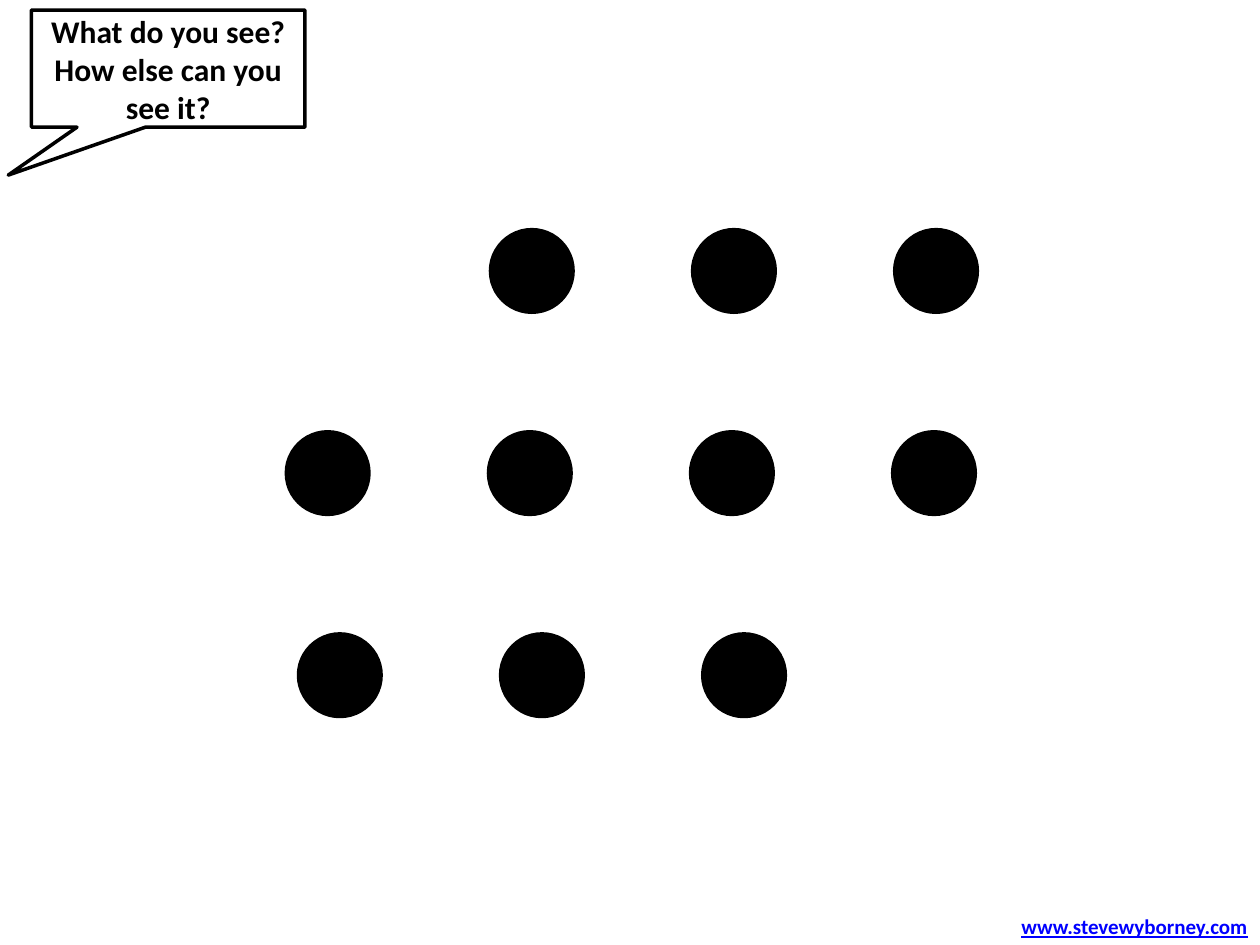
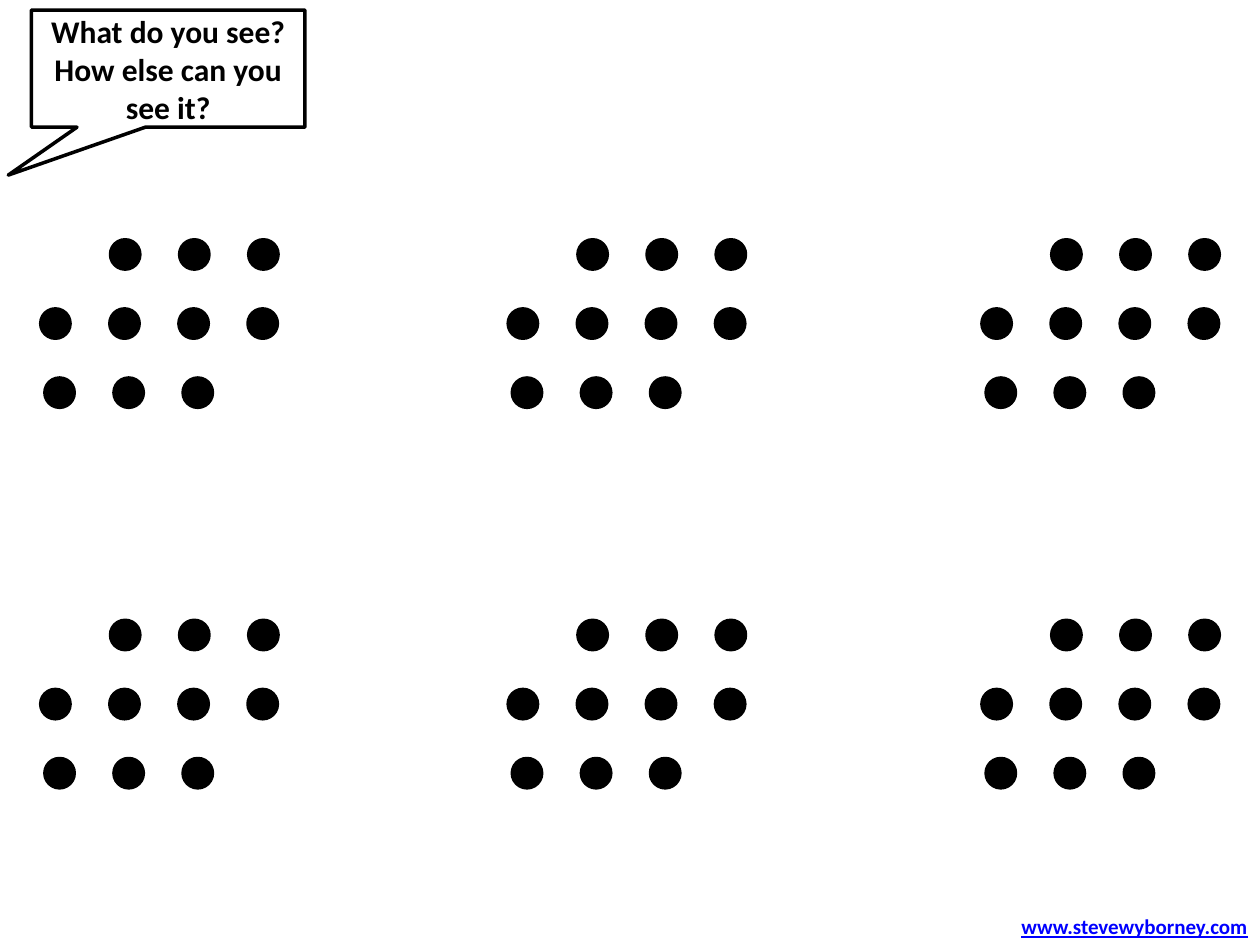
from pptx import Presentation
from pptx.dml.color import RGBColor
from pptx.enum.shapes import MSO_SHAPE
from pptx.enum.text import MSO_ANCHOR, MSO_AUTO_SIZE, PP_ALIGN
from pptx.util import Inches, Pt

ELLIPSE = MSO_SHAPE.OVAL
CALLOUT = MSO_SHAPE.RECTANGULAR_CALLOUT
MIDDLE = MSO_ANCHOR.MIDDLE
FIT_SHAPE = MSO_AUTO_SIZE.SHAPE_TO_FIT_TEXT
CENTER, RIGHT = PP_ALIGN.CENTER, PP_ALIGN.RIGHT

BLACK, WHITE, LINK_BLUE = "000000", "FFFFFF", "0000FF"
QUESTION_FONT = {"name": "Calibri", "size": Pt(18), "bold": True}
FOOTER_FONT = {"name": "Calibri", "size": Pt(12), "bold": True, "underline": True}

CALLOUT_BOX = (0.25, 0.08, 2.17, 0.93)
CALLOUT_TIP = (-0.585, 0.909)
FOOTER_BOX = (7.98, 7.2, 2.02, 0.3)
QUESTIONS = ["What do you see?", "How else can you see it?"]

# Dot rows: indent in pitches and number of dots
DOT_ROWS = [(1.01, 3), (0, 4), (0.06, 3)]
DOT_DIAMETER = 0.4  # in pitches
PATTERN_PITCHES = 1.01 + 2 + DOT_DIAMETER  # width of the whole pattern

# Dot patterns as left, top, width
LARGE_PATTERNS = [(2.28, 1.83, 5.47)]
SMALL_PATTERNS = [(left, top, 1.87)
                  for top in (1.91, 4.93) for left in (0.33, 4.04, 7.8)]


def color(hex_string):
    return RGBColor.from_string(hex_string)


def write_paragraphs(text_frame, lines, font_format, font_color, alignment):
    for index, line in enumerate(lines):
        paragraph = text_frame.paragraphs[0] if index == 0 else text_frame.add_paragraph()
        paragraph.alignment = alignment
        run = paragraph.add_run()
        run.text = line
        for name, value in font_format.items():
            setattr(run.font, name, value)
        run.font.color.rgb = color(font_color)


def add_outlined_shape(shapes, kind, box, fill, line_width):
    shape = shapes.add_shape(kind, *map(Inches, box))
    shape.shadow.inherit = False
    shape.fill.solid()
    shape.fill.fore_color.rgb = color(fill)
    shape.line.color.rgb = color(BLACK)
    shape.line.width = Pt(line_width)
    return shape


def add_dot_pattern(slide, left, top, width):
    pitch = width / PATTERN_PITCHES
    diameter = DOT_DIAMETER * pitch
    group = slide.shapes.add_group_shape()
    for row, (indent, count) in enumerate(DOT_ROWS):
        for column in range(count):
            box = (left + (indent + column) * pitch, top + row * pitch, diameter, diameter)
            add_outlined_shape(group.shapes, ELLIPSE, box, BLACK, 3)


def add_question_callout(slide, box):
    callout = add_outlined_shape(slide.shapes, CALLOUT, box, WHITE, 2)
    for index, offset in enumerate(CALLOUT_TIP):
        callout.adjustments[index] = offset
    callout.text_frame.vertical_anchor = MIDDLE
    callout.text_frame.word_wrap = True
    write_paragraphs(callout.text_frame, QUESTIONS, QUESTION_FONT, BLACK, CENTER)


def add_footer(slide, box):
    text_frame = slide.shapes.add_textbox(*map(Inches, box)).text_frame
    text_frame.word_wrap = False
    text_frame.auto_size = FIT_SHAPE
    write_paragraphs(text_frame, ["www.stevewyborney.com"], FOOTER_FONT, LINK_BLUE, RIGHT)


def add_dot_slide(presentation, patterns):
    slide = presentation.slides.add_slide(presentation.slide_layouts[6])
    slide.background.fill.solid()
    slide.background.fill.fore_color.rgb = color(WHITE)
    for pattern in patterns:
        add_dot_pattern(slide, *pattern)
    add_footer(slide, FOOTER_BOX)
    add_question_callout(slide, CALLOUT_BOX)


def main():
    presentation = Presentation()
    presentation.slide_width, presentation.slide_height = Inches(10), Inches(7.5)
    for patterns in (LARGE_PATTERNS, SMALL_PATTERNS):
        add_dot_slide(presentation, patterns)
    presentation.save("out.pptx")


if __name__ == "__main__":
    main()
